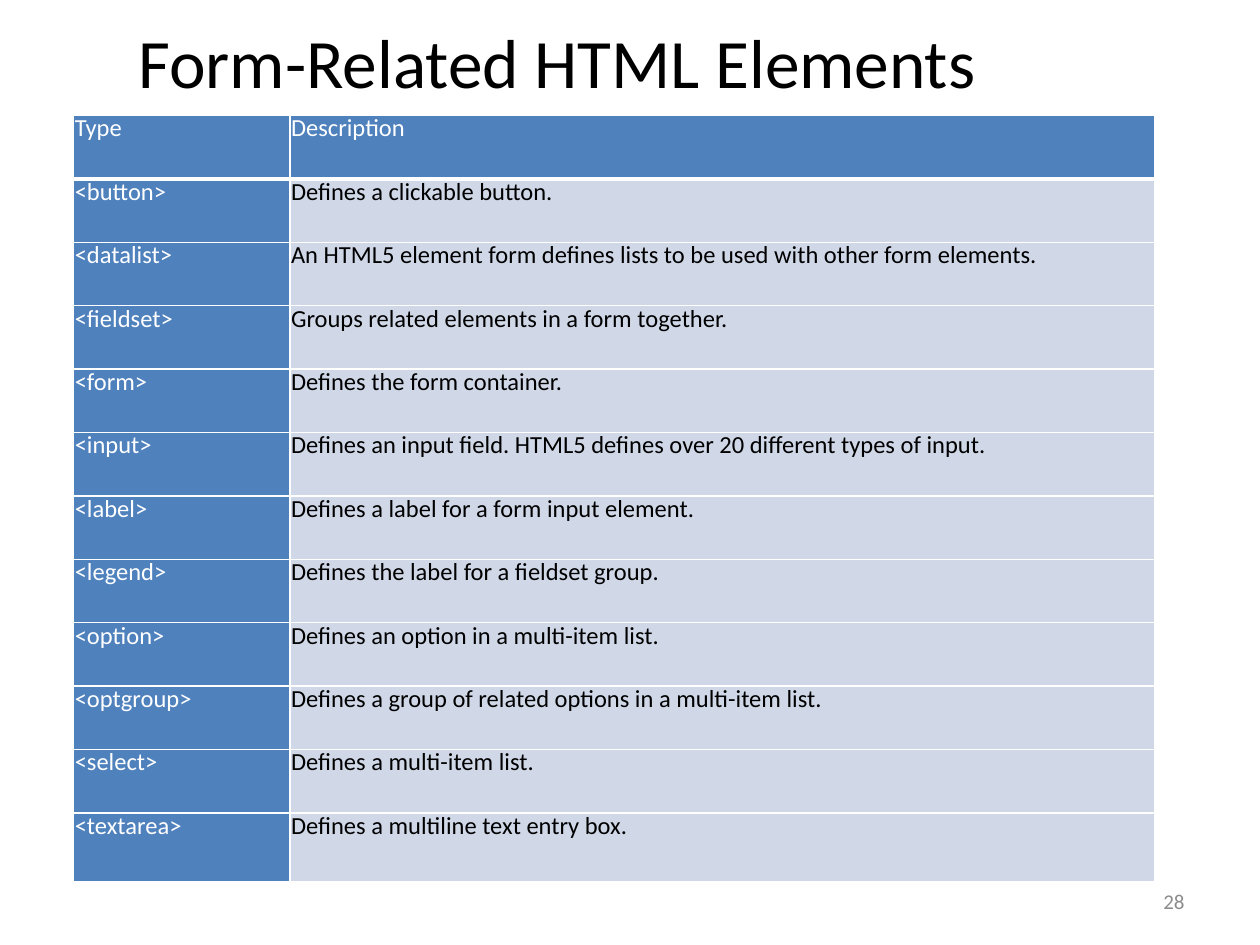
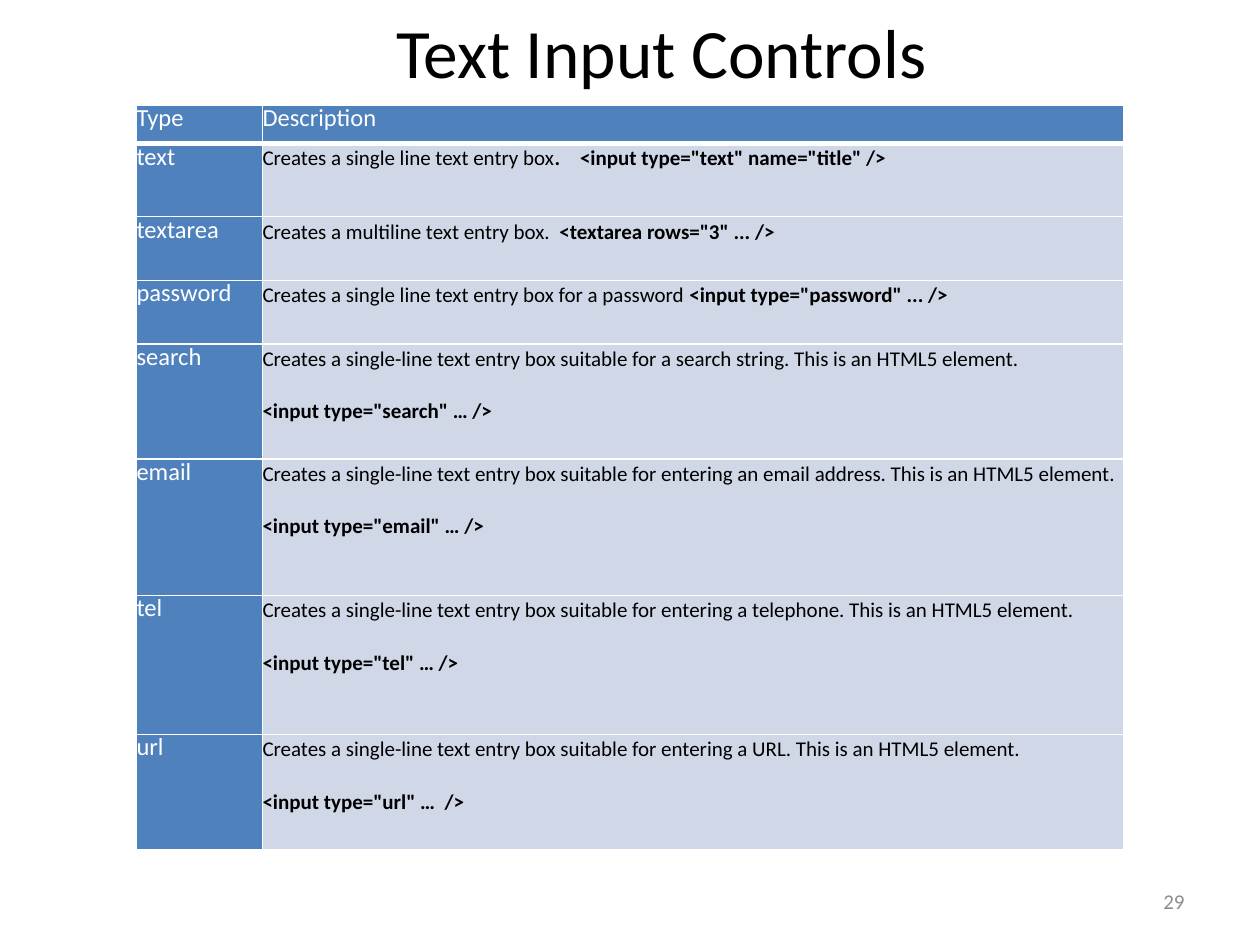
from typing import NamedTuple

from lxml.etree import SubElement
from pptx import Presentation
from pptx.dml.color import RGBColor
from pptx.enum.text import MSO_ANCHOR as Anchor, PP_ALIGN as Align
from pptx.oxml.ns import qn
from pptx.util import Pt

PX = 3048  # EMU per px, 300 px to the inch
FONT = "Calibri"
BLACK, WHITE, GREY = "000000", "FFFFFF", "8C8C8C"
BLUE, PALE = "4F81BD", "D0D8E8"


class Line(NamedTuple):
    """One paragraph: plain text, then bold code, with an optional tab stop in px."""
    plain: str
    code: str = ""
    tab: int = 0


def px(length):
    return length * PX


def color(hex_value):
    return RGBColor.from_string(hex_value)


def set_format(target, values):
    for name, value in values.items():
        setattr(target, name, value)


class Deck:
    def __init__(self, width, height):
        self.presentation = Presentation()
        set_format(self.presentation,
                   {"slide_width": px(width), "slide_height": px(height)})
        self.slide = None

    def add_slide(self):
        self.slide = self.presentation.slides.add_slide(
            self.presentation.slide_layouts[6])

    def run(self, paragraph, text, size, font_color, bold=False):
        run = paragraph.add_run()
        run.text = text
        set_format(run.font, {"name": FONT, "size": Pt(size), "bold": bold})
        run.font.color.rgb = color(font_color)

    def text(self, box, text, size, font_color, align):
        frame = self.slide.shapes.add_textbox(*map(px, box)).text_frame
        set_format(frame, {"word_wrap": True, "vertical_anchor": Anchor.MIDDLE})
        paragraph = frame.paragraphs[0]
        paragraph.alignment = align
        self.run(paragraph, text, size, font_color)

    def title(self, text, height, align):
        self.text((300, 40, 2550, height), text, 39.6, BLACK, align)

    def number(self, number):
        self.text((2150, 2085, 700, 120), str(number), 12, GREY, Align.RIGHT)

    def borders(self, cell, bottom):
        properties = cell._tc.get_or_add_tcPr()
        for side, width in {"L": 1, "R": 1, "T": 1, "B": bottom}.items():
            line = SubElement(properties, qn(f"a:ln{side}"), w=str(Pt(width)))
            fill = SubElement(line, qn("a:solidFill"))
            SubElement(fill, qn("a:srgbClr"), val=WHITE)

    def cell(self, cell, lines, size, font_color, fill, inset, header):
        self.borders(cell, 3 if header else 1)
        cell.fill.solid()
        cell.fill.fore_color.rgb = color(fill)
        set_format(cell, {"margin_left": px(inset), "margin_right": px(inset),
                          "margin_top": 0, "margin_bottom": 0})
        frame = cell.text_frame
        for index, line in enumerate(lines):
            paragraph = frame.add_paragraph() if index else frame.paragraphs[0]
            if line.tab:
                tabs = SubElement(paragraph._p.get_or_add_pPr(), qn("a:tabLst"))
                SubElement(tabs, qn("a:tab"), pos=str(px(line.tab)), algn="l")
            set_format(paragraph, {"line_spacing": Pt(16),
                                   "space_before": Pt(7 if index else 0),
                                   "space_after": Pt(14 if header else 7)})
            for text, bold in ((line.plain, False), (line.code, True)):
                if text:
                    self.run(paragraph, text, size, font_color, bold)

    def table(self, left, top, columns, heights, rows, size, inset):
        """A header row, then rows of a type name and its description lines."""
        rows = [("Type", [Line("Description")]), *rows]
        table = self.slide.shapes.add_table(
            len(rows), len(columns), px(left), px(top),
            px(sum(columns)), px(sum(heights))).table
        table.horz_banding = False
        for column, width in zip(table.columns, columns):
            column.width = px(width)
        for index, (name, lines) in enumerate(rows):
            table.rows[index].height = px(heights[index])
            header = index == 0
            self.cell(table.cell(index, 0), [Line(name)], 14, WHITE, BLUE,
                      inset, header)
            style = (14, WHITE, BLUE) if header else (size, BLACK, PALE)
            self.cell(table.cell(index, 1), lines, *style, inset, header)


ELEMENTS = {
    "button": "Defines a clickable button.",
    "datalist": "An HTML5 element form defines lists to be used with other form elements.",
    "fieldset": "Groups related elements in a form together.",
    "form": "Defines the form container.",
    "input": "Defines an input field. HTML5 defines over 20 different types of input.",
    "label": "Defines a label for a form input element.",
    "legend": "Defines the label for a fieldset group.",
    "option": "Defines an option in a multi-item list.",
    "optgroup": "Defines a group of related options in a multi-item list.",
    "select": "Defines a multi-item list.",
    "textarea": "Defines a multiline text entry box.",
}


def single_line(purpose, code):
    return [Line(f"Creates a single-line text entry box suitable for {purpose}. "
                 "This is an HTML5 element."), Line("", code)]


CONTROLS = [
    ("text", [Line("Creates a single line text entry box",
                   '.\t<input type="text" name="title" />', 756)]),
    ("textarea", [Line("Creates a multiline text entry box.\t",
                       '<textarea rows="3" ... />', 707)]),
    ("password", [Line("Creates a single line text entry box for a password ",
                       '<input type="password" ... />')]),
    ("search", single_line("a search string", '<input type="search" … />')),
    ("email", single_line("entering an email address", '<input type="email" … />')),
    ("tel", single_line("entering a telephone", '<input type="tel" … />')),
    ("url", single_line("entering a URL", '<input type="url" …  />')),
]


def main():
    deck = Deck(3000, 2250)

    # Form elements
    deck.add_slide()
    deck.title("Form-Related HTML Elements", 210, Align.LEFT)
    deck.table(175, 275, (515, 2060), [151] * 11 + [164],
               [(f"<{name}>", [Line(text)]) for name, text in ELEMENTS.items()],
               size=14, inset=3)
    deck.number(28)

    # Text input controls
    deck.add_slide()
    deck.title("Text Input Controls", 160, Align.CENTER)
    deck.table(325, 250, (300, 2050), (92, 174, 152, 151, 274, 325, 331, 275),
               CONTROLS, size=12, inset=0)
    deck.number(29)

    deck.presentation.save("out.pptx")


if __name__ == "__main__":
    main()
